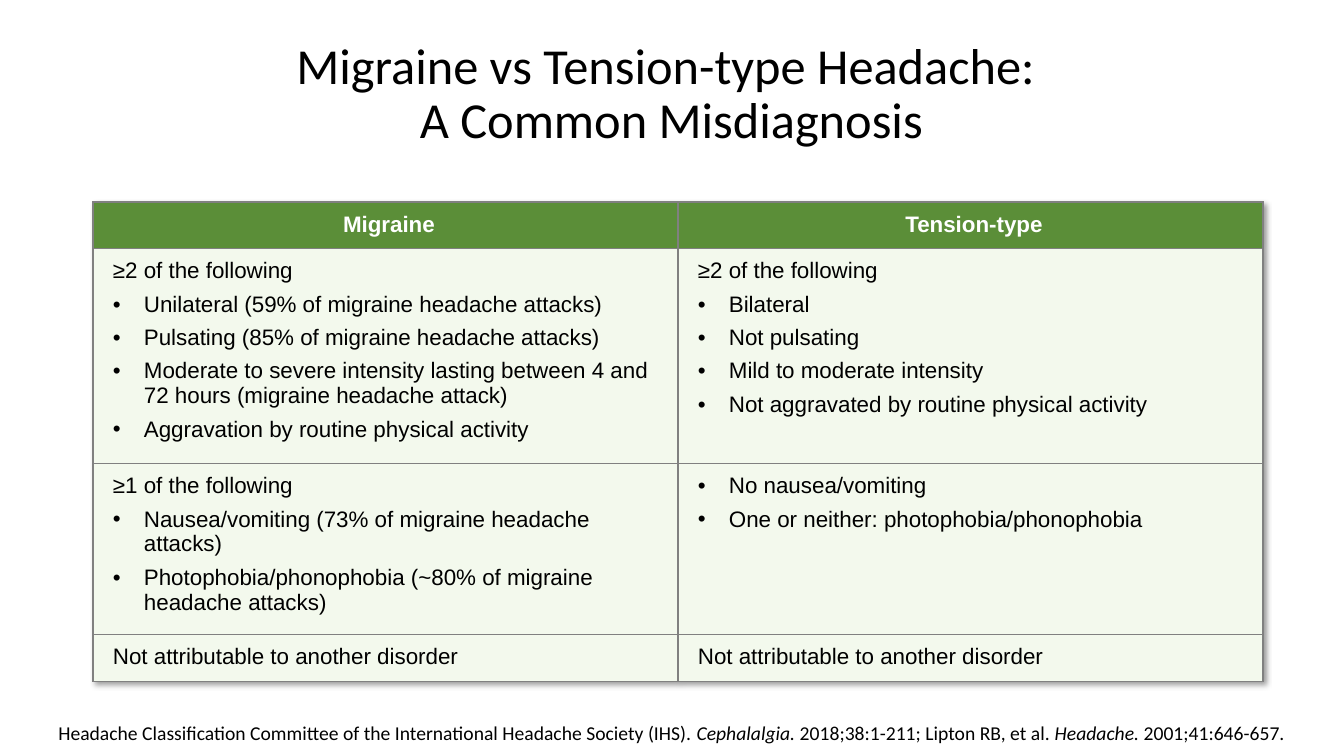
from lxml import etree
from pptx import Presentation
from pptx.dml.color import RGBColor
from pptx.enum.text import MSO_ANCHOR as Anchor, PP_ALIGN as Align
from pptx.oxml import parse_xml
from pptx.oxml.ns import nsdecls, qn
from pptx.util import Pt

BLACK, WHITE, GREEN, PALE, GRAY = "000000", "FFFFFF", "5B8E38", "F3F9ED", "808080"

BREAK = ("\n", False)
TITLE = [
    ("Migraine vs Tension-type Headache: ", False),
    BREAK,
    ("A Common Misdiagnosis", False),
]
SOURCE = [
    ("Headache Classification Committee of the International Headache Society (IHS). ", False),
    ("Cephalalgia.", True),
    (" 2018;38:1-211; Lipton RB, et al. ", False),
    ("Headache.", True),
    (" 2001;41:646-657.", False),
]
HEADS = ["Migraine", "Tension-type"]
# Each cell: lead line (or None), then its bullets
ROWS = [
    [("≥2 of the following", [
        "Unilateral (59% of migraine headache attacks)",
        "Pulsating (85% of migraine headache attacks)",
        "Moderate to severe intensity lasting between 4 and 72 hours (migraine headache attack)",
        "Aggravation by routine physical activity"]),
     ("≥2 of the following", [
         "Bilateral", "Not pulsating", "Mild to moderate intensity",
         "Not aggravated by routine physical activity"])],
    [("≥1 of the following", [
        "Nausea/vomiting (73% of migraine headache attacks)",
        "Photophobia/phonophobia (~80% of migraine headache attacks)"]),
     (None, ["No nausea/vomiting", "One or neither: photophobia/phonophobia"])],
    [("Not attributable to another disorder", [])] * 2,
]
# Least heights: each row grows to fit its text
HEIGHTS = [38, 61, 41, 41]


def px(n):
    return round(n * 914400 / 100.8)


def color(code):
    return RGBColor.from_string(code)


def style(item, **values):
    for name, value in values.items():
        setattr(item, name, value)


def add_run(para, text, tint=BLACK, **font):
    run = para.add_run()
    run.text = text
    style(run.font, **font)
    run.font.color.rgb = color(tint)


def add_text(slide, box, parts, size, space=1.0):
    """Add a centred text box made of (text, italic) parts."""
    frame = slide.shapes.add_textbox(*map(px, box)).text_frame
    style(frame, word_wrap=True, vertical_anchor=Anchor.MIDDLE)
    para = frame.paragraphs[0]
    style(para, alignment=Align.CENTER, line_spacing=space)
    for part in parts:
        if part == BREAK:
            para.add_line_break()
        else:
            text, slant = part
            add_run(para, text, name="Calibri", size=Pt(size), italic=slant)


def add_bullet(para):
    props = para._p.get_or_add_pPr()
    props.set("marL", str(px(31)))
    props.set("indent", str(px(-31)))
    font = etree.SubElement(props, qn("a:buFont"))
    font.set("typeface", "Arial")
    etree.SubElement(props, qn("a:buChar")).set("char", "•")


def dress(cell, fill):
    """Give the cell its insets, borders and fill."""
    style(cell, margin_left=px(20), margin_right=px(13),
          margin_top=px(10), margin_bottom=px(10))
    props = cell._tc.get_or_add_tcPr()
    for side in "LRTB":
        props.append(parse_xml(
            f'<a:ln{side} {nsdecls("a")} w="{Pt(1)}"><a:solidFill>'
            f'<a:srgbClr val="{GRAY}"/></a:solidFill></a:ln{side}>'))
    cell.fill.solid()
    cell.fill.fore_color.rgb = color(fill)


def fill_cell(cell, lead, points):
    dress(cell, PALE)
    lines = ([(lead, False)] if lead else []) + [(point, True) for point in points]
    frame = cell.text_frame
    for i, (text, dot) in enumerate(lines):
        para = frame.add_paragraph() if i else frame.paragraphs[0]
        if dot:
            add_bullet(para)
        if i:
            para.space_before = Pt(6)
        add_run(para, text, name="Arial", size=Pt(16), bold=False)


def add_shadow(table):
    table._tbl.tblPr.insert(0, parse_xml(
        f'<a:effectLst {nsdecls("a")}><a:outerShdw blurRad="{px(5)}" dist="{px(4)}" '
        f'dir="2700000" algn="tl" rotWithShape="0"><a:srgbClr val="{BLACK}">'
        '<a:alpha val="40000"/></a:srgbClr></a:outerShdw></a:effectLst>'))


def add_grid(slide, box):
    width = box[2]
    table = slide.shapes.add_table(len(HEIGHTS), len(HEADS), *map(px, box)).table
    style(table, first_row=False, horz_banding=False)
    add_shadow(table)
    for col in table.columns:
        col.width = px(width / len(HEADS))
    for row, tall in zip(table.rows, HEIGHTS):
        row.height = px(tall)
    for c, head in enumerate(HEADS):
        cell = table.cell(0, c)
        dress(cell, GREEN)
        para = cell.text_frame.paragraphs[0]
        para.alignment = Align.CENTER
        add_run(para, head, WHITE, name="Arial", size=Pt(16), bold=True)
    for r, row in enumerate(ROWS, 1):
        for c, (lead, points) in enumerate(row):
            fill_cell(table.cell(r, c), lead, points)


def main():
    deck = Presentation()
    style(deck, slide_width=px(1344), slide_height=px(756))
    slide = deck.slides.add_slide(deck.slide_layouts[6])
    add_text(slide, (92, 22, 1159, 146), TITLE, 36, 0.9)
    add_grid(slide, (93, 202, 1170, sum(HEIGHTS)))
    add_text(slide, (37, 716, 1269, 34), SOURCE, 14)
    deck.save("out.pptx")


if __name__ == "__main__":
    main()
